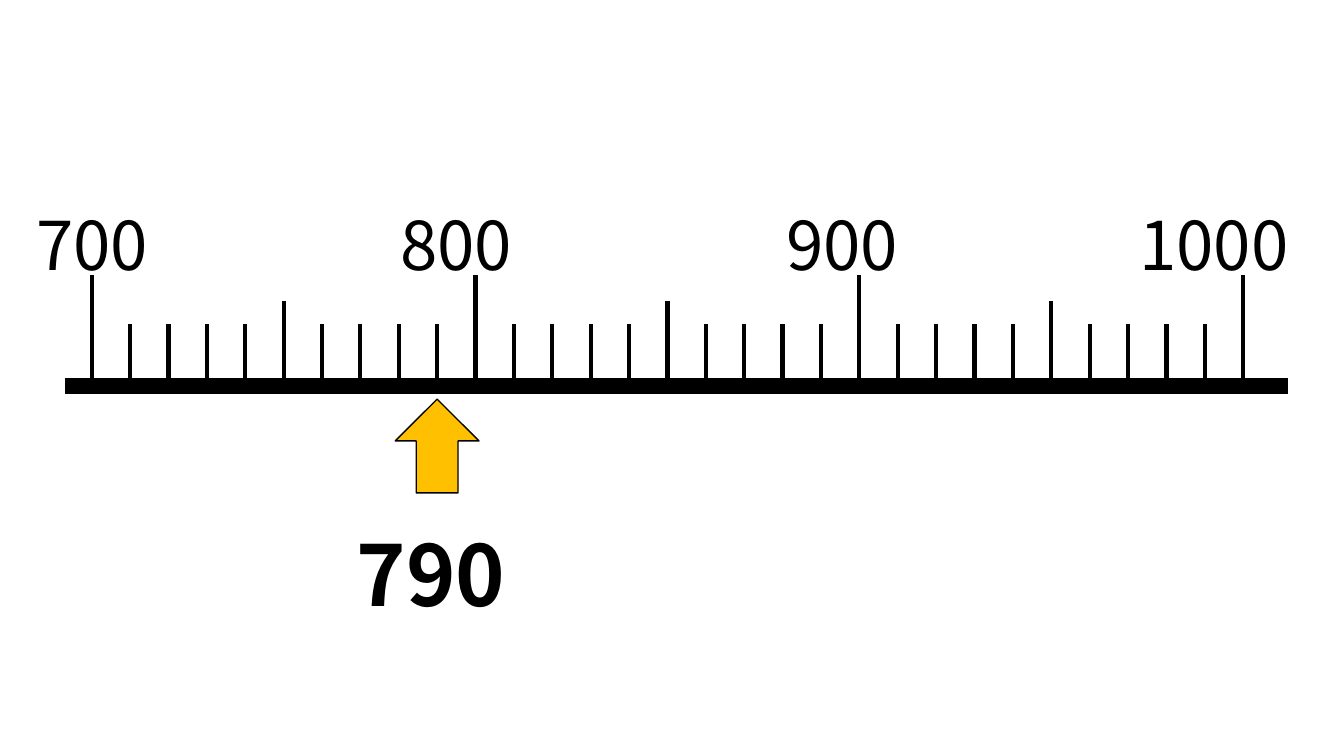
from dataclasses import dataclass

from pptx import Presentation
from pptx import util as u
from pptx.dml import color
from pptx.enum import shapes, text
from pptx.oxml import ns
from lxml import etree


@dataclass(frozen=True)
class Theme:
    font: str = "Noto Sans CJK JP"
    ink: color.RGBColor = color.RGBColor(0, 0, 0)
    gold: color.RGBColor = color.RGBColor(0xFF, 0xC0, 0)
    label: int = 48
    answer: int = 60
    axis: int = 12
    tick: int = 3
    edge: int = 1


THEME = Theme()
START, END, STEP = 700, 1000, 10
LEFT, RIGHT, BASE = 0.91, 12.33, 3.83
LABELS = {700: (0.26, 1.46), 800: (3.87, 1.46), 900: (7.7, 1.46), 1000: (11.2, 1.88)}
ANSWER = 790


def place(value):
    return LEFT + (value - START) / (END - START) * (RIGHT - LEFT)


def top(value):
    if value % 100 == 0:
        return 2.73
    return 2.99 if value % 50 == 0 else 3.21


def style(item, **values):
    for name, value in values.items():
        setattr(item, name, value)


def add_line(tree, x1, y1, x2, y2, width):
    line = tree.add_connector(
        shapes.MSO_CONNECTOR.STRAIGHT, *map(u.Inches, (x1, y1, x2, y2))
    )
    line.line.width = u.Pt(width)
    line.line.color.rgb = THEME.ink
    etree.SubElement(line._element.spPr, ns.qn("a:effectLst"))


def add_text(tree, value, box, size, bold=False, wrap=False):
    frame = tree.add_textbox(*map(u.Inches, box)).text_frame
    style(frame, word_wrap=wrap, auto_size=text.MSO_AUTO_SIZE.SHAPE_TO_FIT_TEXT)
    run = frame.paragraphs[0].add_run()
    run.text = str(value)
    style(run.font, name=THEME.font, size=u.Pt(size), bold=bold)
    run.font.color.rgb = THEME.ink


def add_arrow(tree, value):
    width = 0.83
    box = (place(value) - width / 2, 3.96, width, 0.93)
    arrow = tree.add_shape(shapes.MSO_SHAPE.UP_ARROW, *map(u.Inches, box))
    arrow.shadow.inherit = False
    arrow.fill.solid()
    arrow.fill.fore_color.rgb = THEME.gold
    arrow.line.color.rgb = THEME.ink
    arrow.line.width = u.Pt(THEME.edge)


def add_scale(tree):
    add_line(tree, 0.64, BASE, 12.77, BASE, THEME.axis)
    for value in range(START, END + STEP, STEP):
        x = place(value)
        add_line(tree, x, BASE, x, top(value), THEME.tick)
    for value, (left, width) in LABELS.items():
        add_text(tree, value, (left, 1.97, width, 0.91), THEME.label)


def main():
    deck = Presentation()
    style(deck, slide_width=u.Inches(13.33), slide_height=u.Inches(7.5))
    slide = deck.slides.add_slide(deck.slide_layouts[6])
    add_arrow(slide.shapes, ANSWER)
    add_text(
        slide.shapes, ANSWER, (3.44, 5.13, 2.09, 1.11), THEME.answer, bold=True, wrap=True
    )
    add_scale(slide.shapes.add_group_shape().shapes)
    deck.save("out.pptx")


if __name__ == "__main__":
    main()
